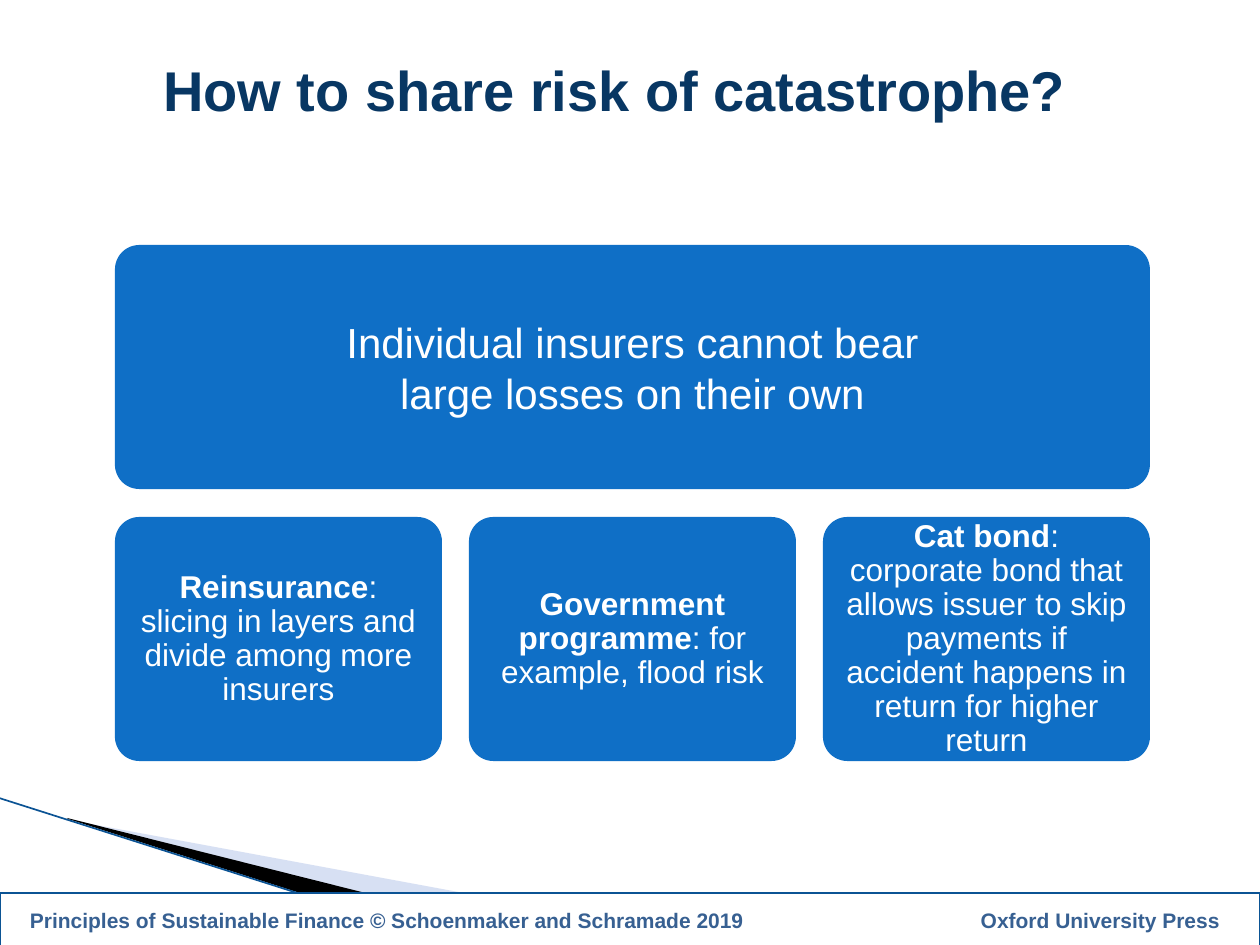
from lxml import etree
from pptx import Presentation
from pptx import util as u
from pptx.dml.color import RGBColor
from pptx.enum import shapes, text
from pptx.oxml.ns import qn

EMU_PER_PX = u.Inches(1) / 126
COLORS = {
    "navy": "083763",
    "card": "0F6FC6",
    "white": "FFFFFF",
    "black": "000000",
    "pale": "9DB2E1",
    "edge": "0B5394",
    "footer": "376092",
}


def px(n):
    return u.Emu(round(n * EMU_PER_PX))


def rgb(name):
    return RGBColor.from_string(COLORS[name])


def add_run(p, content, size=18, color="white", bold=False, font="Arial"):
    r = p.add_run()
    r.text = content
    r.font.name, r.font.size, r.font.bold = font, u.Pt(size), bold
    r.font.color.rgb = rgb(color)


class SlideBuilder:
    def __init__(self, prs, font="Arial"):
        self.s = prs.slides.add_slide(prs.slide_layouts[6])
        self.font = font

    def paint(self, sp, fill, line=None, width=1.5):
        sp.shadow.inherit = False
        sp.fill.solid()
        sp.fill.fore_color.rgb = rgb(fill)
        if line:
            sp.line.color.rgb = rgb(line)
            sp.line.width = u.Pt(width)
        else:
            sp.line.fill.background()

    def set_text(self, sp, runs, inset=0, align=text.PP_ALIGN.CENTER,
                 spacing=None, **style):
        """Fill a shape with one paragraph made of (text, bold) runs."""
        tf = sp.text_frame
        tf.word_wrap = True
        tf.vertical_anchor = text.MSO_ANCHOR.MIDDLE
        tf.margin_left = tf.margin_right = px(inset)
        tf.margin_top = tf.margin_bottom = 0
        p = tf.paragraphs[0]
        p.alignment = align
        if spacing:
            p.line_spacing = spacing
        for i, (content, bold) in enumerate(runs):
            for j, part in enumerate(content.split("\v")):
                if j:
                    p.add_line_break()
                add_run(p, part, bold=bold, font=self.font, **style)
        return p

    def wedge(self, points, fill, opacity=100):
        fb = self.s.shapes.build_freeform(*points[0], scale=EMU_PER_PX)
        fb.add_line_segments(points[1:], close=True)
        sp = fb.convert_to_shape()
        self.paint(sp, fill)
        if opacity < 100:
            clr = sp._element.spPr.find(".//" + qn("a:srgbClr"))
            etree.SubElement(clr, qn("a:alpha"), val=str(opacity * 1000))

    def line(self, x1, y1, x2, y2, color, width):
        cn = self.s.shapes.add_connector(
            shapes.MSO_CONNECTOR.STRAIGHT, px(x1), px(y1), px(x2), px(y2))
        cn.line.color.rgb = rgb(color)
        cn.line.width = u.Pt(width)
        etree.SubElement(cn._element.spPr, qn("a:effectLst"))

    def title(self, content, x, y, w, h):
        sp = self.s.shapes.add_textbox(px(x), px(y), px(w), px(h))
        self.set_text(sp, [(content, True)], size=32, color="navy")

    def card(self, runs, x, y, w, h, **style):
        sp = self.s.shapes.add_shape(
            shapes.MSO_SHAPE.ROUNDED_RECTANGLE, px(x), px(y), px(w), px(h))
        sp.adjustments[0] = 0.1
        self.paint(sp, "card")
        self.set_text(sp, runs, **style)

    def footer(self, left, right, y, w, h, inset):
        """Draw the bottom bar, with its right text on a right-aligned tab."""
        sp = self.s.shapes.add_shape(
            shapes.MSO_SHAPE.RECTANGLE, 0, px(y), px(w), px(h))
        self.paint(sp, "white", line="edge")
        p = self.set_text(sp, [(f"{left}\t{right}", True)], inset=inset,
                          align=text.PP_ALIGN.LEFT, size=12, color="footer")
        tabs = etree.SubElement(p._p.get_or_add_pPr(), qn("a:tabLst"))
        etree.SubElement(tabs, qn("a:tab"), pos=str(px(w - 2 * inset - 10)), algn="r")


def main():
    prs = Presentation()
    prs.slide_width, prs.slide_height = px(1260), px(945)
    b = SlideBuilder(prs)

    b.wedge([(69, 820), (750, 946), (575, 946), (69, 819)], "pale", opacity=40)
    b.wedge([(67, 818), (576, 946), (469, 947), (68, 819)], "black")
    b.line(-1, 798, 467, 947, "edge", 0.95)

    left, top, width, height, gap = 115, 245, 327, 244, 27
    b.card([("Individual insurers cannot bear\vlarge losses on their own", False)],
           left, top, 3 * width + 2 * gap, height, inset=19, size=24)
    options = [
        ("Reinsurance", "slicing in layers and divide among more insurers"),
        ("Government programme", "for example, flood risk"),
        ("Cat bond", "corporate bond that allows issuer to skip payments "
                     "if accident happens in return for higher return"),
    ]
    for i, (name, detail) in enumerate(options):
        b.card([(name, True), (f": {detail}", False)],
               left + i * (width + gap), top + height + gap + 1, width, height,
               inset=16, spacing=0.9)

    b.footer("Principles of Sustainable Finance © Schoenmaker and Schramade 2019",
             "Oxford University Press", y=893, w=1260, h=55, inset=30)
    b.title("How to share risk of catastrophe?", 94, 45, 1042, 89)
    prs.save("out.pptx")


if __name__ == "__main__":
    main()
